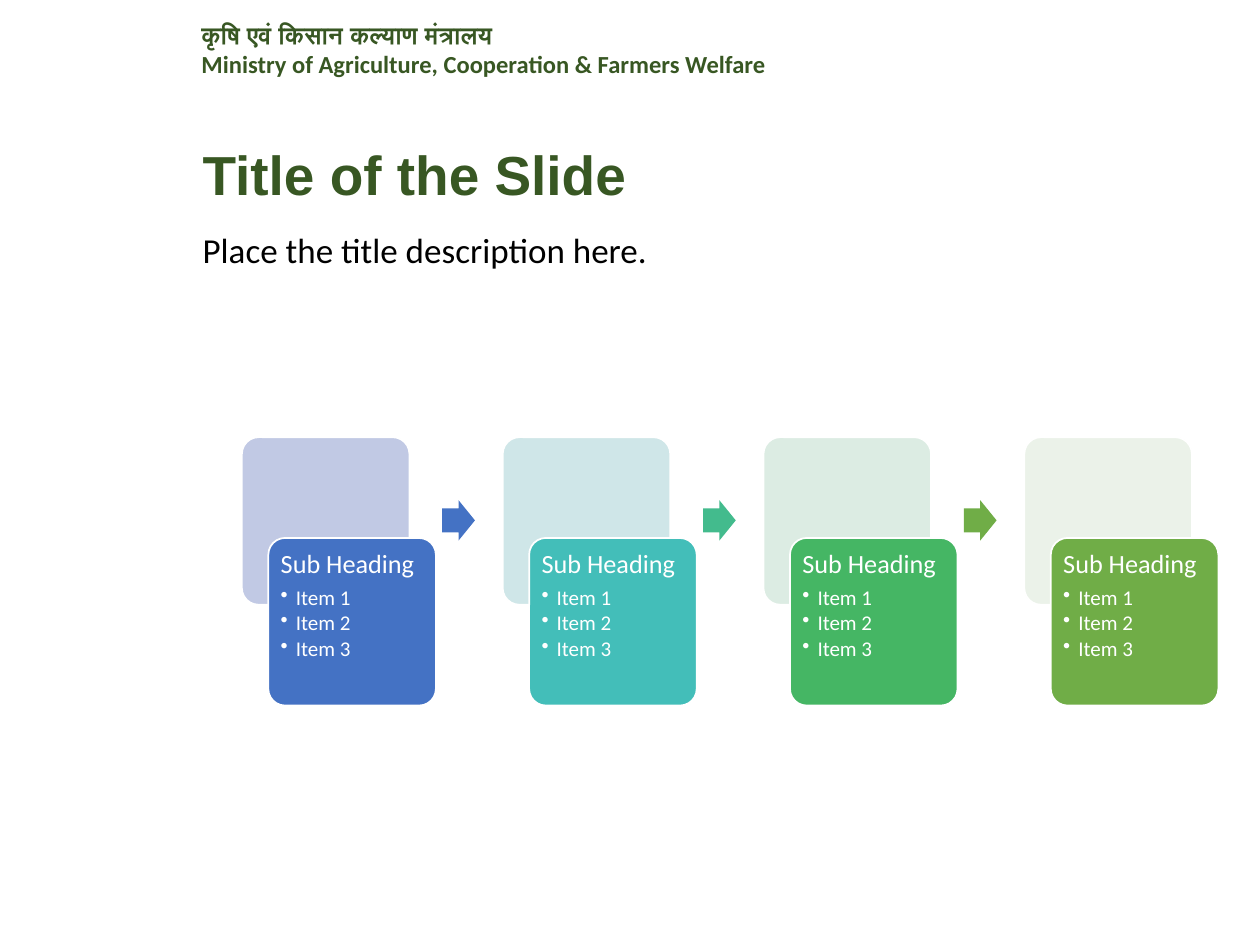
from dataclasses import dataclass

from lxml import etree
from pptx import Presentation
from pptx.dml.color import RGBColor
from pptx.enum.shapes import MSO_SHAPE
from pptx.enum.text import MSO_ANCHOR, PP_ALIGN
from pptx.oxml.ns import qn
from pptx.util import Inches, Pt

ROUND_RECT = MSO_SHAPE.ROUNDED_RECTANGLE
RIGHT_ARROW = MSO_SHAPE.RIGHT_ARROW
TOP = MSO_ANCHOR.TOP
LEFT = PP_ALIGN.LEFT

COLORS = {
    "heading": "385723", "body": "000000", "white": "FFFFFF",
    "blue": "4472C4", "pale_blue": "C1C9E4",
    "teal": "43BEB9", "pale_teal": "CFE6E8", "sea": "43BB8D",
    "green": "45B664", "pale_green": "DCECE3",
    "olive": "70AD47", "pale_olive": "EBF2E9",
}
FIRST_LEFT, STEP = 1.92, 2.07
PANEL_TOP, CARD_TOP, ARROW_TOP = 3.47, 4.27, 3.97
CARD_OFFSET, ARROW_OFFSET = 0.21, 1.59
SIDE = 1.33


@dataclass
class Stage:
    panel: str
    card: str
    arrow: str | None = None
    heading: str = "Sub Heading"
    items: tuple[str, ...] = ("Item 1", "Item 2", "Item 3")


@dataclass
class Label:
    box: tuple[float, float, float, float]
    lines: tuple[str, ...]
    size: float
    color: str
    font: str = "Calibri"
    bold: bool = False
    spacing: float = 1.0
    inset_top: float = 0.05


STAGES = [
    Stage("pale_blue", "blue", "blue"),
    Stage("pale_teal", "teal", "sea"),
    Stage("pale_green", "green", "olive"),
    Stage("pale_olive", "olive"),
]
LABELS = [
    Label((1.5, 0.11, 5.09, 0.81),
          ("कृषि एवं किसान कल्याण मंत्रालय",
           "Ministry of Agriculture, Cooperation & Farmers Welfare"),
          14, "heading", bold=True),
    Label((1.51, 1.16, 4.6, 0.47), ("Title of the Slide",), 31.4, "heading",
          font="Arial", bold=True, spacing=0.7, inset_top=0.1),
    Label((1.51, 1.8, 5.39, 0.37), ("Place the title description here.",),
          20, "body", spacing=0.9),
]


def rgb(name: str) -> RGBColor:
    return RGBColor.from_string(COLORS[name])


def style(p, size: float, color: str, font: str = "Calibri", bold: bool = False) -> None:
    for r in p.runs:
        r.font.name = font
        r.font.size = Pt(size)
        r.font.bold = bold
        r.font.color.rgb = rgb(color)


def add_label(s, label: Label) -> None:
    tf = s.shapes.add_textbox(*map(Inches, label.box)).text_frame
    tf.word_wrap = True
    tf.margin_top = Inches(label.inset_top)
    tf.text = "\n".join(label.lines)
    for p in tf.paragraphs:
        p.line_spacing = label.spacing
        style(p, label.size, label.color, label.font, label.bold)


def add_block(s, kind, box: tuple[float, float, float, float], fill: str):
    sp = s.shapes.add_shape(kind, *map(Inches, box))
    sp.shadow.inherit = False
    sp.fill.solid()
    sp.fill.fore_color.rgb = rgb(fill)
    if kind == ROUND_RECT:
        sp.adjustments[0] = 0.1
        sp.line.color.rgb = rgb("white")
        sp.line.width = Pt(1)
    else:
        sp.adjustments[0] = 0.6
        sp.line.fill.background()
    return sp


def add_bullet(p) -> None:
    pPr = p._p.get_or_add_pPr()
    pPr.set("marL", str(Inches(0.12)))
    pPr.set("indent", str(-Inches(0.12)))
    etree.SubElement(pPr, qn("a:buChar")).set("char", "•")


def fill_card(sp, stage: Stage) -> None:
    tf = sp.text_frame
    tf.word_wrap = True
    tf.vertical_anchor = TOP
    tf.margin_left = tf.margin_right = tf.margin_top = tf.margin_bottom = Inches(0.06)
    tf.text = "\n".join((stage.heading, *stage.items))
    for i, p in enumerate(tf.paragraphs):
        if i:
            p.level = 1
            add_bullet(p)
        p.alignment = LEFT
        p.line_spacing = 0.9
        p.space_after = Pt(1.5 if i else 5)
        style(p, 12 if i else 15, "white")


def add_stage(s, stage: Stage, left: float) -> None:
    add_block(s, ROUND_RECT, (left, PANEL_TOP, SIDE, SIDE), stage.panel)
    card = add_block(s, ROUND_RECT, (left + CARD_OFFSET, CARD_TOP, SIDE, SIDE), stage.card)
    fill_card(card, stage)
    if stage.arrow:
        add_block(s, RIGHT_ARROW, (left + ARROW_OFFSET, ARROW_TOP, 0.26, 0.32), stage.arrow)


def main() -> None:
    """Build the four-stage process slide."""
    prs = Presentation()
    prs.slide_width, prs.slide_height = Inches(10), Inches(7.5)
    s = prs.slides.add_slide(prs.slide_layouts[6])
    for label in LABELS:
        add_label(s, label)
    for i, stage in enumerate(STAGES):
        add_stage(s, stage, FIRST_LEFT + i * STEP)
    prs.save("out.pptx")


if __name__ == "__main__":
    main()
